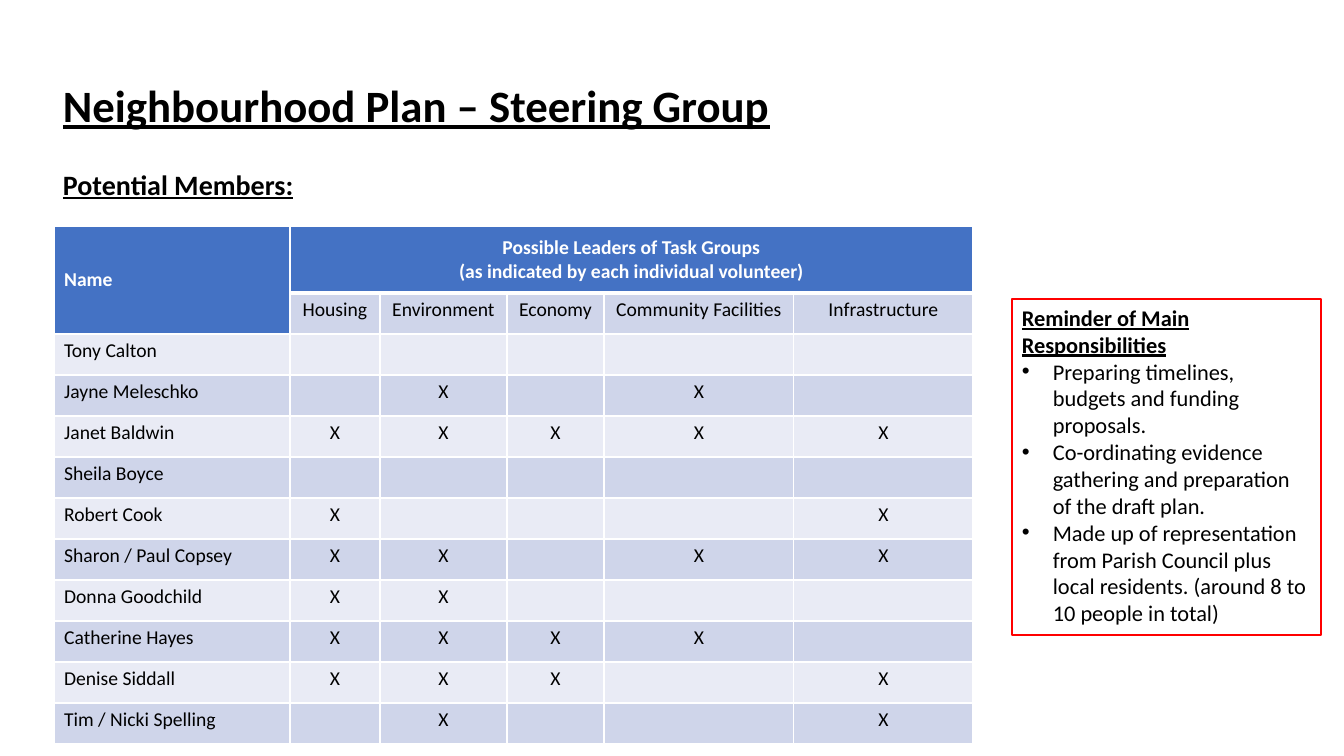
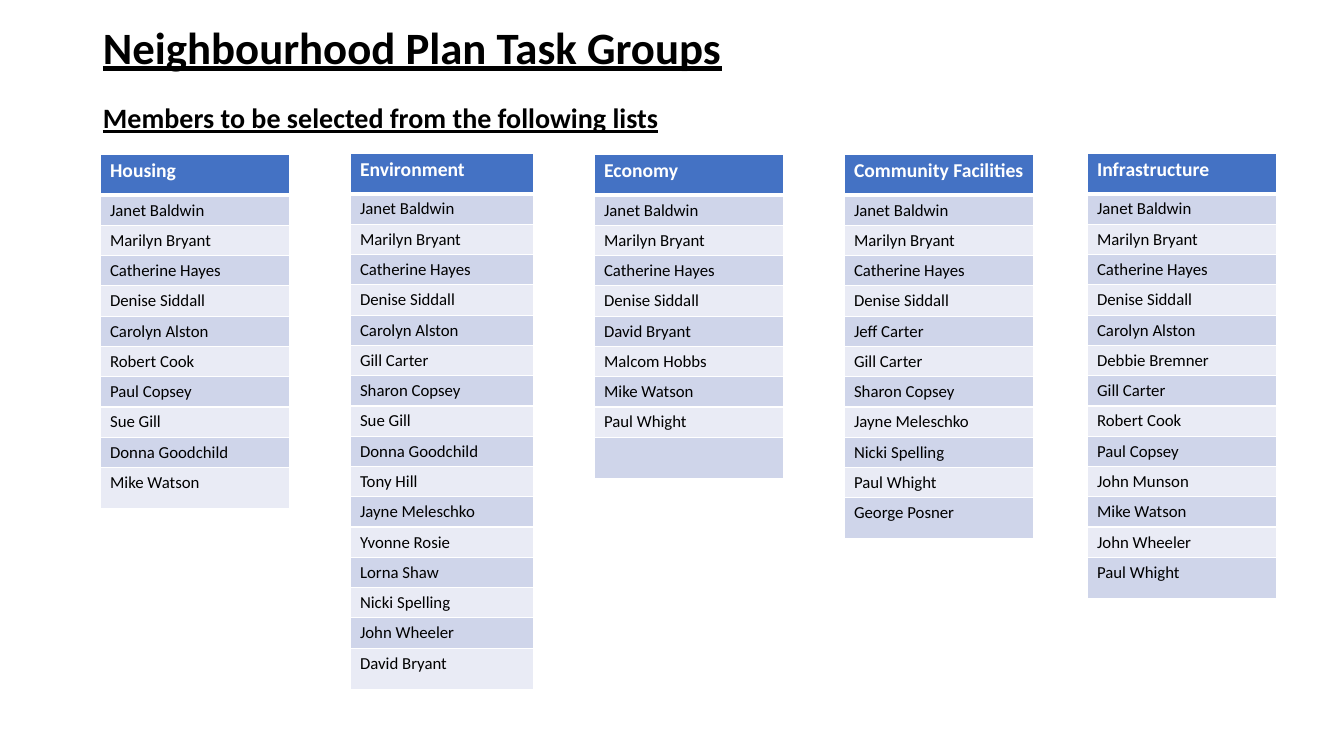
"""Build the two Neighbourhood Plan slides: steering group and task groups."""
from lxml import etree
from pptx import Presentation
from pptx.dml.color import RGBColor
from pptx.enum.text import MSO_ANCHOR, PP_ALIGN
from pptx.oxml.ns import qn
from pptx.util import Emu, Pt

PX = 914400 / 100.8
LEFT, CENTER = PP_ALIGN.LEFT, PP_ALIGN.CENTER
TOP, MIDDLE = MSO_ANCHOR.TOP, MSO_ANCHOR.MIDDLE

BLACK = RGBColor(0x00, 0x00, 0x00)
WHITE = RGBColor(0xFF, 0xFF, 0xFF)
RED = RGBColor(0xFF, 0x00, 0x00)
HEADER_BLUE = RGBColor(0x44, 0x72, 0xC4)
BAND_DARK = RGBColor(0xCF, 0xD5, 0xEA)
BAND_LIGHT = RGBColor(0xE9, 0xEB, 0xF5)
BANDS = (BAND_DARK, BAND_LIGHT)

FONT = "Calibri"
TITLE = {"name": FONT, "size": Pt(32), "bold": True, "underline": True}
SUBTITLE = {**TITLE, "size": Pt(20)}
NOTE_HEADING = {**TITLE, "size": Pt(16)}
NOTE = {"name": FONT, "size": Pt(16), "bold": False}
HEADER = {"name": FONT, "size": Pt(14), "bold": True}
BODY = {**HEADER, "bold": False}
MEMBER = {**BODY, "size": Pt(12)}

ROW, HEADER_ROW, MEMBER_ROW = 41, 67, 30
THIN, THICK = 1, 3


def style_text(para, colour, formats):
    """Apply a colour and a dict of font values to every run of a paragraph."""
    for span in para.runs:
        span.font.color.rgb = colour
        for key, value in formats.items():
            setattr(span.font, key, value)


def fill_cell(cell, text, fill, formats, align=LEFT, top=THIN, bottom=THIN):
    """Write, border and fill one table cell."""
    cell.text = text
    for para in cell.text_frame.paragraphs:
        para.alignment = align
        style_text(para, WHITE if fill == HEADER_BLUE else BLACK, formats)
    properties = cell._tc.get_or_add_tcPr()
    for side, width in (("L", THIN), ("R", THIN), ("T", top), ("B", bottom)):
        line = etree.SubElement(properties, qn(f"a:ln{side}"), w=str(Pt(width)))
        solid = etree.SubElement(line, qn("a:solidFill"))
        etree.SubElement(solid, qn("a:srgbClr"), val=str(WHITE))
    cell.fill.solid()
    cell.fill.fore_color.rgb = fill


deck = Presentation()
deck.slide_width, deck.slide_height = Emu(round(1344 * PX)), Emu(round(756 * PX))
steering_page, groups_page = [deck.slides.add_slide(deck.slide_layouts[6]) for _ in range(2)]

headings = [
    (steering_page, (53, 35, 1159, 146), MIDDLE,
     [("Neighbourhood Plan – Steering Group", TITLE)]),
    (steering_page, (53, 166, 297, 49), TOP, [("Potential Members:", SUBTITLE)]),
    (groups_page, (93, 7, 1159, 146), MIDDLE,
     [("Neighbourhood Plan Task Groups", TITLE),
      ("Members to be selected from the following lists", SUBTITLE)]),
]
for page, place, anchor, lines in headings:
    box = page.shapes.add_textbox(*[Emu(round(value * PX)) for value in place])
    frame = box.text_frame
    frame.word_wrap = True
    frame.vertical_anchor = anchor
    frame.text = "\n".join(text for text, _ in lines)
    for index, (para, (_, formats)) in enumerate(zip(frame.paragraphs, lines)):
        para.line_spacing = 0.9
        if index:
            para.space_before = Pt(22)
        style_text(para, BLACK, formats)

responsibilities = [
    "Reminder of Main Responsibilities",
    "Preparing timelines, budgets and funding proposals.",
    "Co-ordinating evidence gathering and preparation of the draft plan.",
    "Made up of representation from Parish Council plus local residents. "
    "(around 8 to 10 people in total)",
]
reminder = steering_page.shapes.add_textbox(
    *[Emu(round(value * PX)) for value in (1012, 299, 309, 336)])
reminder.line.color.rgb = RED
reminder.line.width = Pt(1)
reminder.text_frame.word_wrap = True
reminder.text_frame.text = "\n".join(responsibilities)
for index, para in enumerate(reminder.text_frame.paragraphs):
    if index:
        indent = round(31 * PX)
        properties = para._p.get_or_add_pPr()
        properties.set("marL", str(indent))
        properties.set("indent", str(-indent))
        etree.SubElement(properties, qn("a:buFont"), typeface="Arial")
        etree.SubElement(properties, qn("a:buChar"), char="•")
    style_text(para, BLACK, NOTE if index else NOTE_HEADING)

task_groups = ["Housing", "Environment", "Economy", "Community Facilities", "Infrastructure"]
volunteers = [
    ("Tony Calton", "....."),
    ("Jayne Meleschko", ".X.X."),
    ("Janet Baldwin", "XXXXX"),
    ("Sheila Boyce", "....."),
    ("Robert Cook", "X...X"),
    ("Sharon / Paul Copsey", "XX.XX"),
    ("Donna Goodchild", "XX..."),
    ("Catherine Hayes", "XXXX."),
    ("Denise Siddall", "XXX.X"),
    ("Tim / Nicki Spelling", ".X..X"),
]
leaders_title = "Possible Leaders of Task Groups\n(as indicated by each individual volunteer)"
grid = [["Name", leaders_title, "", "", "", ""], ["", *task_groups]]
grid += [[name, *marks.replace(".", " ")] for name, marks in volunteers]
widths = [236, 90, 127, 97, 190, 179]
heights = [HEADER_ROW] + [ROW] * (len(grid) - 1)
table = steering_page.shapes.add_table(
    len(grid), len(widths),
    *[Emu(round(value * PX)) for value in (54, 226, sum(widths), sum(heights))]).table
table.first_row = table.horz_banding = False
for column, width in zip(table.columns, widths):
    column.width = Emu(round(width * PX))
for row_index, (row, height) in enumerate(zip(grid, heights)):
    table.rows[row_index].height = Emu(round(height * PX))
    for column_index, text in enumerate(row):
        is_header = row_index == 0 or (row_index == 1 and column_index == 0)
        fill_cell(
            table.cell(row_index, column_index), text.strip(),
            HEADER_BLUE if is_header else BANDS[(row_index - 1) % 2],
            HEADER if is_header else BODY,
            CENTER if column_index else LEFT,
            THICK if row_index == 1 and column_index else THIN,
            THICK if row_index == 0 and column_index else THIN)
table.cell(0, 0).merge(table.cell(1, 0))
table.cell(0, 1).merge(table.cell(0, 5))
for column_index in range(2):
    table.cell(0, column_index).vertical_anchor = MIDDLE

common = ["Janet Baldwin", "Marilyn Bryant", "Catherine Hayes", "Denise Siddall"]
places = [(100, 154, 190), (350, 153, 184), (594, 154, 190), (844, 154, 190), (1087, 153, 190)]
other_members = [
    ["Carolyn Alston", "Robert Cook", "Paul Copsey", "Sue Gill", "Donna Goodchild",
     "Mike Watson"],
    ["Carolyn Alston", "Gill Carter", "Sharon Copsey", "Sue Gill", "Donna Goodchild",
     "Tony Hill", "Jayne Meleschko", "Yvonne Rosie", "Lorna Shaw", "Nicki Spelling",
     "John Wheeler", "David Bryant"],
    ["David Bryant", "Malcom Hobbs", "Mike Watson", "Paul Whight", ""],
    ["Jeff Carter", "Gill Carter", "Sharon Copsey", "Jayne Meleschko", "Nicki Spelling",
     "Paul Whight", "George Posner"],
    ["Carolyn Alston", "Debbie Bremner", "Gill Carter", "Robert Cook", "Paul Copsey",
     "John Munson", "Mike Watson", "John Wheeler", "Paul Whight"],
]
for group, (left, top, width), others in zip(task_groups, places, other_members):
    names = [group, *common, *others]
    heights = [ROW] + [MEMBER_ROW] * (len(names) - 2) + [ROW]
    table = groups_page.shapes.add_table(
        len(names), 1,
        *[Emu(round(value * PX)) for value in (left, top, width, sum(heights))]).table
    table.first_row = table.horz_banding = False
    for index, (name, height) in enumerate(zip(names, heights)):
        table.rows[index].height = Emu(round(height * PX))
        fill_cell(
            table.cell(index, 0), name,
            BANDS[(index - 1) % 2] if index else HEADER_BLUE,
            MEMBER if index else HEADER,
            top=THICK if index == 1 else THIN,
            bottom=THIN if index else THICK)

deck.save("out.pptx")
